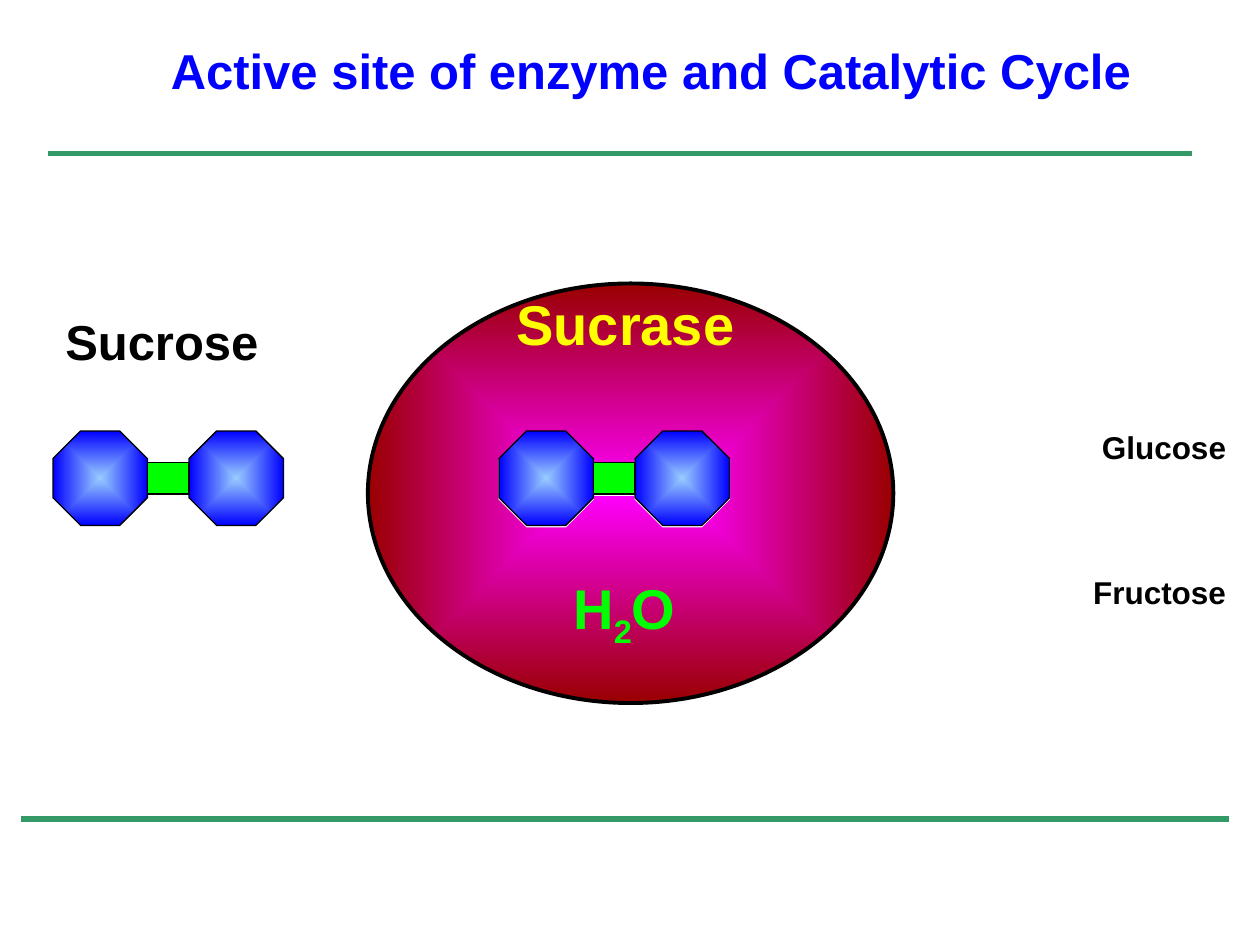
import dataclasses

import lxml.etree
import pptx
import pptx.dml.color
import pptx.enum.shapes
import pptx.enum.text
import pptx.oxml
import pptx.oxml.ns
import pptx.util

Inches = pptx.util.Inches
Shape = pptx.enum.shapes.MSO_SHAPE
Align = pptx.enum.text.PP_ALIGN
qn = pptx.oxml.ns.qn


@dataclasses.dataclass(frozen=True)
class Theme:
    font: str = "Arial"
    title: str = "0000FF"
    text: str = "000000"
    enzyme_name: str = "FFFF00"
    bond: str = "00FF00"
    rule: str = "339966"
    outline: str = "000000"
    active_site: str = "FFFFFF"
    enzyme: tuple = ("FF00FF", "990000")
    sugar: tuple = ("99CCFF", "0000FF")
    large: int = 32
    heading: int = 28
    small: int = 18
    thin: float = 0.75
    medium: float = 2.25
    thick: float = 3


THEME = Theme()


def rgb(value):
    return pptx.dml.color.RGBColor.from_string(value)


def fill_from_centre(shape, colors):
    shape.fill.gradient()
    for stop, color in zip(shape.fill.gradient_stops, colors):
        stop.color.rgb = rgb(color)
    gradient = shape._element.spPr.find(qn("a:gradFill"))
    gradient.remove(gradient.find(qn("a:lin")))
    centre = lxml.etree.SubElement(gradient, qn("a:path"))
    centre.set("path", "shape")
    focus = lxml.etree.SubElement(centre, qn("a:fillToRect"))
    for side in "ltrb":
        focus.set(side, "50000")


def add_figure(shapes, preset, box, fill, outline, width):
    figure = shapes.add_shape(preset, *map(Inches, box))
    figure.shadow.inherit = False
    if isinstance(fill, tuple):
        fill_from_centre(figure, fill)
    else:
        figure.fill.solid()
        figure.fill.fore_color.rgb = rgb(fill)
    figure.line.color.rgb = rgb(outline)
    figure.line.width = pptx.util.Pt(width)
    return figure


def add_disaccharide(shapes, left, top, sugar, bond, outline):
    side, bond_width, bond_height = 0.75, 0.33, 0.25
    for sugar_left in (left + side + bond_width, left):
        ring = add_figure(shapes, Shape.OCTAGON, (sugar_left, top, side, side),
                          sugar, outline, THEME.thin)
        ring.adjustments[0] = 0.293
    bond_box = (left + side, top + (side - bond_height) / 2, bond_width, bond_height)
    add_figure(shapes, Shape.RECTANGLE, bond_box, bond, outline, THEME.thin)


def add_label(shapes, parts, box, size, color, align=Align.LEFT):
    frame = shapes.add_textbox(*map(Inches, box)).text_frame
    frame.word_wrap = True
    frame.auto_size = pptx.enum.text.MSO_AUTO_SIZE.SHAPE_TO_FIT_TEXT
    paragraph = frame.paragraphs[0]
    paragraph.alignment = align
    paragraph.font.name = THEME.font
    paragraph.font.size = pptx.util.Pt(size)
    paragraph.font.bold = True
    paragraph.font.color.rgb = rgb(color)
    for part in parts:
        run = paragraph.add_run()
        run.text = part
        if part.isdigit():
            run._r.get_or_add_rPr().set("baseline", "-25000")


def add_rule(shapes, left, right, top):
    rule = shapes.add_connector(pptx.enum.shapes.MSO_CONNECTOR.STRAIGHT,
                                Inches(left), Inches(top), Inches(right), Inches(top))
    rule.line.color.rgb = rgb(THEME.rule)
    rule.line.width = pptx.util.Pt(THEME.thick)
    lxml.etree.SubElement(rule._element.spPr, qn("a:effectLst"))


def main():
    deck = pptx.Presentation()
    deck.slide_width, deck.slide_height = Inches(10), Inches(7.5)
    shapes = deck.slides.add_slide(deck.slide_layouts[6]).shapes

    add_label(shapes, ["Active site of enzyme and Catalytic Cycle"],
              (0.5, 0.27, 9.33, 0.57), THEME.heading, THEME.title, Align.CENTER)
    add_figure(shapes, Shape.OVAL, (2.92, 2.25, 4.17, 3.33),
               THEME.enzyme, THEME.outline, THEME.medium)

    active_site = shapes.add_group_shape().shapes
    add_disaccharide(active_site, 3.96, 3.43,
                     THEME.active_site, THEME.active_site, THEME.active_site)
    free_sucrose = shapes.add_group_shape().shapes
    for container, left in ((free_sucrose, 0.42), (shapes, 3.96)):
        add_disaccharide(container, left, 3.42, THEME.sugar, THEME.bond, THEME.outline)

    add_label(shapes, ["Sucrase"], (4, 2.25, 2, 0.63), THEME.large, THEME.enzyme_name)
    add_label(shapes, ["Sucrose"], (0.42, 2.42, 1.83, 0.57), THEME.heading, THEME.text)
    for product, top in (("Glucose", 3.35), ("Fructose", 4.5)):
        add_label(shapes, [product], (8.5, top, 1.33, 0.4),
                  THEME.small, THEME.text, Align.RIGHT)
    add_label(shapes, ["H", "2", "O"], (4.33, 4.5, 1.25, 0.63),
              THEME.large, THEME.bond, Align.CENTER)

    add_rule(shapes, 0.17, 9.75, 6.5)
    add_rule(shapes, 0.38, 9.46, 1.22)
    deck.save("out.pptx")


if __name__ == "__main__":
    main()
